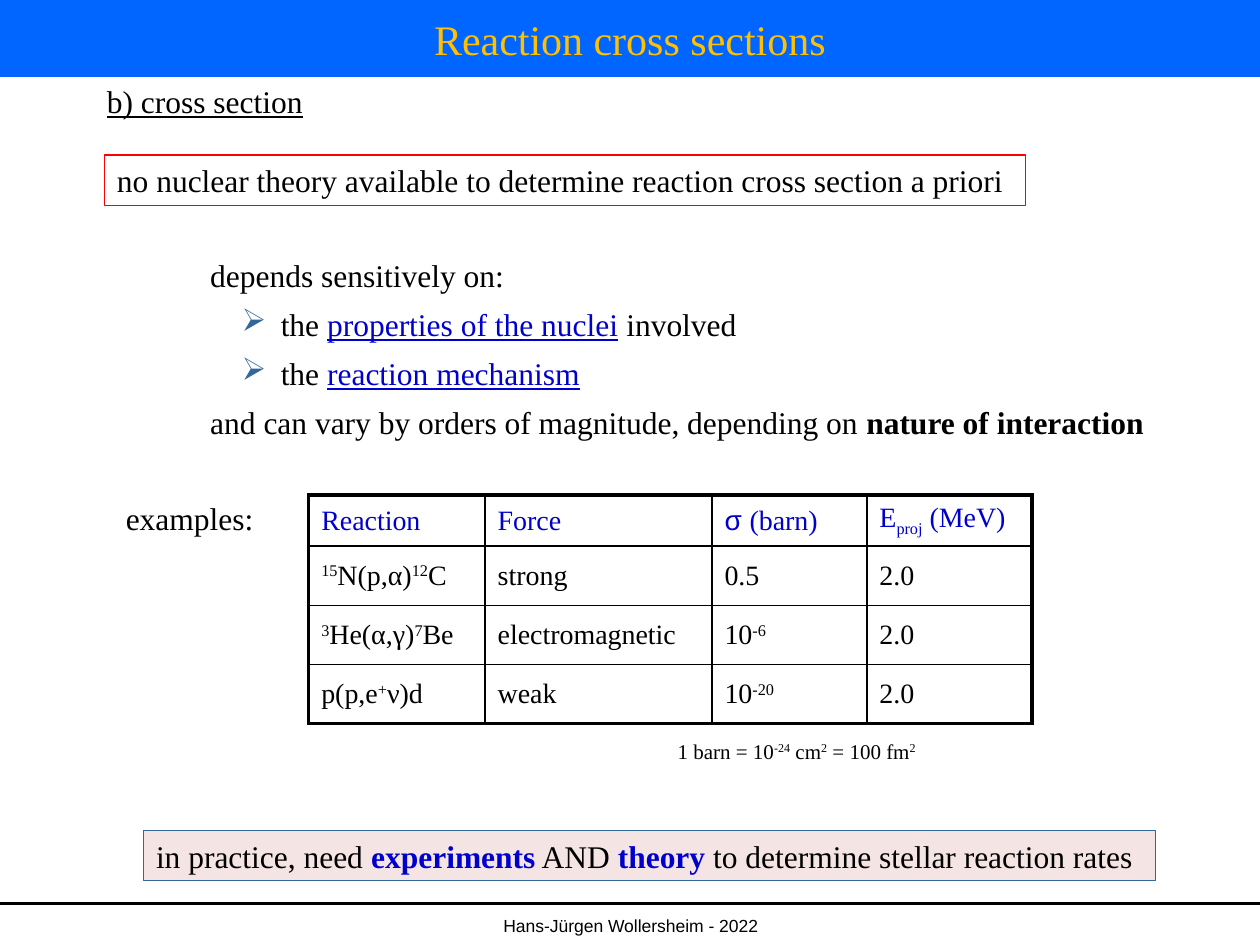
from lxml.etree import SubElement
from pptx import Presentation
from pptx.dml.color import RGBColor
from pptx.enum.shapes import MSO_CONNECTOR as LINE, MSO_SHAPE as SHAPE
from pptx.enum.text import MSO_ANCHOR as ANCHOR, MSO_AUTO_SIZE as AUTO, PP_ALIGN as ALIGN
from pptx.oxml.ns import qn
from pptx.util import Inches, Pt

BLACK = RGBColor(0x00, 0x00, 0x00)
BLUE = RGBColor(0x00, 0x00, 0xCC)
BAR = RGBColor(0x00, 0x66, 0xFF)
GOLD = RGBColor(0xFF, 0xC0, 0x00)
RED = RGBColor(0xFF, 0x00, 0x00)
STEEL = RGBColor(0x33, 0x66, 0x99)
ROSE = RGBColor(0xC0, 0x50, 0x4D)
SERIF, SANS = "Times New Roman", "Arial"

WIDE, HIGH = Inches(10), Inches(7.5)
COL, ROW = WIDE / 100, HIGH / 75

# Run marks: ^ raised, _ lowered, b bold, u underlined, c blue, a sans
HEAD = [[("Reaction", "c")], [("Force", "c")],
        [("σ ", "ca"), ("(barn)", "c")],
        [("E", "c"), ("proj", "c_"), (" (MeV)", "c")]]
BODY = [
    [[("15", "^"), "N(p,α)", ("12", "^"), "C"], ["strong"], ["0.5"], ["2.0"]],
    [[("3", "^"), "He(α,γ)", ("7", "^"), "Be"], ["electromagnetic"],
     ["10", ("-6", "^")], ["2.0"]],
    [["p(p,e", ("+", "^"), "ν)d"], ["weak"], ["10", ("-20", "^")], ["2.0"]],
]


def place(x, y, w, h):
    """Turn grid columns and rows into lengths."""
    return round(x * COL), round(y * ROW), round(w * COL), round(h * ROW)


def write(para, runs, size=18, face=SERIF, color=BLACK, align=ALIGN.LEFT):
    para.alignment = align
    para.font.size, para.font.name = Pt(size), face
    for item in runs:
        text, marks = (item, "") if isinstance(item, str) else item
        run = para.add_run()
        run.text = text
        font = run.font
        font.color.rgb = BLUE if "c" in marks else color
        if "b" in marks:
            font.bold = True
        if "u" in marks:
            font.underline = True
        if "a" in marks:
            font.name = SANS
        for mark, shift in (("^", "30000"), ("_", "-25000")):
            if mark in marks:
                font._element.set("baseline", shift)


def fit(frame):
    frame.word_wrap = False
    frame.auto_size = AUTO.SHAPE_TO_FIT_TEXT


def label(slide, box, runs, size=18):
    frame = slide.shapes.add_textbox(*place(*box)).text_frame
    fit(frame)
    write(frame.paragraphs[0], runs, size)


def frame_box(slide, box, runs, edge, tint=None):
    shape = slide.shapes.add_shape(SHAPE.RECTANGLE, *place(*box))
    shape.shadow.inherit = False
    shape.line.color.rgb, shape.line.width = edge, Pt(0.75)
    if tint is None:
        shape.fill.background()
    else:
        shape.fill.solid()
        shape.fill.fore_color.rgb = tint
        paint = shape._element.spPr.find(qn("a:solidFill"))[0]
        SubElement(paint, qn("a:alpha"), val="15000")
    fit(shape.text_frame)
    write(shape.text_frame.paragraphs[0], runs)


def bullet(para):
    props = para._p.get_or_add_pPr()
    props.set("marL", str(Inches(0.56)))
    props.set("indent", str(-Inches(0.31)))
    color = SubElement(props, qn("a:buClr"))
    SubElement(color, qn("a:srgbClr"), val=str(STEEL))
    SubElement(props, qn("a:buChar"), char="➢")


def points(slide, box, lines):
    frame = slide.shapes.add_textbox(*place(*box)).text_frame
    fit(frame)
    for i, (listed, runs) in enumerate(lines):
        para = frame.add_paragraph() if i else frame.paragraphs[0]
        para.line_spacing = 1.3
        if listed:
            para.level = 1
            bullet(para)
        write(para, runs)


def border(cell, sides):
    props = cell._tc.get_or_add_tcPr()
    for i, (side, outer) in enumerate(sides):
        line = props.makeelement(qn("a:ln" + side),
                                 {"w": str(Pt(2.25 if outer else 1))})
        fill = SubElement(line, qn("a:solidFill"))
        SubElement(fill, qn("a:srgbClr"), val=str(BLACK))
        props.insert(i, line)


def grid(slide, box, widths, heights, rows):
    table = slide.shapes.add_table(len(rows), len(widths), *place(*box)).table
    table.first_row = table.horz_banding = False
    for col, width in zip(table.columns, widths):
        col.width = round(width * COL)
    for row, height in zip(table.rows, heights):
        row.height = round(height * ROW)
    for r, row in enumerate(rows):
        for c, runs in enumerate(row):
            cell = table.cell(r, c)
            cell.vertical_anchor = ANCHOR.MIDDLE
            cell.fill.background()
            border(cell, [("L", c == 0), ("R", c == len(row) - 1),
                          ("T", r == 0), ("B", r == len(rows) - 1)])
            write(cell.text_frame.paragraphs[0], runs, 16)


def banner(slide, text):
    title = slide.shapes.title
    title.left, title.top, title.width, title.height = place(0, 0, 100, 6.1)
    title.fill.solid()
    title.fill.fore_color.rgb = BAR
    frame = title.text_frame
    frame.auto_size = AUTO.NONE
    frame.vertical_anchor = ANCHOR.MIDDLE
    write(frame.paragraphs[0], [text], 24, color=GOLD, align=ALIGN.CENTER)


def footer(slide, text):
    y = round(71.7 * ROW)
    rule = slide.shapes.add_connector(LINE.STRAIGHT, 0, y, WIDE, y)
    rule.line.color.rgb, rule.line.width = BLACK, Pt(1.5)
    SubElement(rule._element.spPr, qn("a:effectLst"))
    frame = slide.shapes.add_textbox(*place(0.1, 72.1, 99.9, 2.9)).text_frame
    frame.word_wrap = True
    write(frame.paragraphs[0], [text], 10, SANS, align=ALIGN.CENTER)


def main():
    deck = Presentation()
    deck.slide_width, deck.slide_height = WIDE, HIGH
    slide = deck.slides.add_slide(deck.slide_layouts[5])

    # Title bar and footer
    footer(slide, "Hans-Jürgen Wollersheim - 2022")
    banner(slide, "Reaction cross sections")

    # Claim and what it depends on
    label(slide, (7.5, 6, 17.7, 4), [("b) cross section", "u")])
    frame_box(slide, (8.3, 12.3, 73.1, 4),
              ["no nuclear theory available to determine reaction cross section a priori"], RED)
    points(slide, (15.7, 18.9, 76.9, 16.8), [
        (False, ["depends sensitively on:"]),
        (True, ["the ", ("properties of the nuclei", "cu"), " involved"]),
        (True, ["the ", ("reaction mechanism", "cu")]),
        (False, ["and can vary by orders of magnitude, depending on ",
                 ("nature of interaction", "b")]),
    ])

    # Examples
    label(slide, (9, 39.1, 12.3, 4), ["examples:"])
    grid(slide, (24.5, 39.3, 57.4, 18), (14, 18, 12.3, 13.1),
         (4.05, 4.7, 4.7, 4.7), [HEAD] + BODY)
    label(slide, (52.8, 58.1, 21.5, 3),
          ["1 barn = 10", ("-24", "^"), " cm", ("2", "^"), " = 100 fm", ("2", "^")], 12)

    # Conclusion
    frame_box(slide, (11.4, 65.9, 80.3, 4),
              ["in practice, need ", ("experiments", "cb"), " AND ", ("theory", "cb"),
               " to determine stellar reaction rates"], STEEL, ROSE)
    deck.save("out.pptx")


if __name__ == "__main__":
    main()
